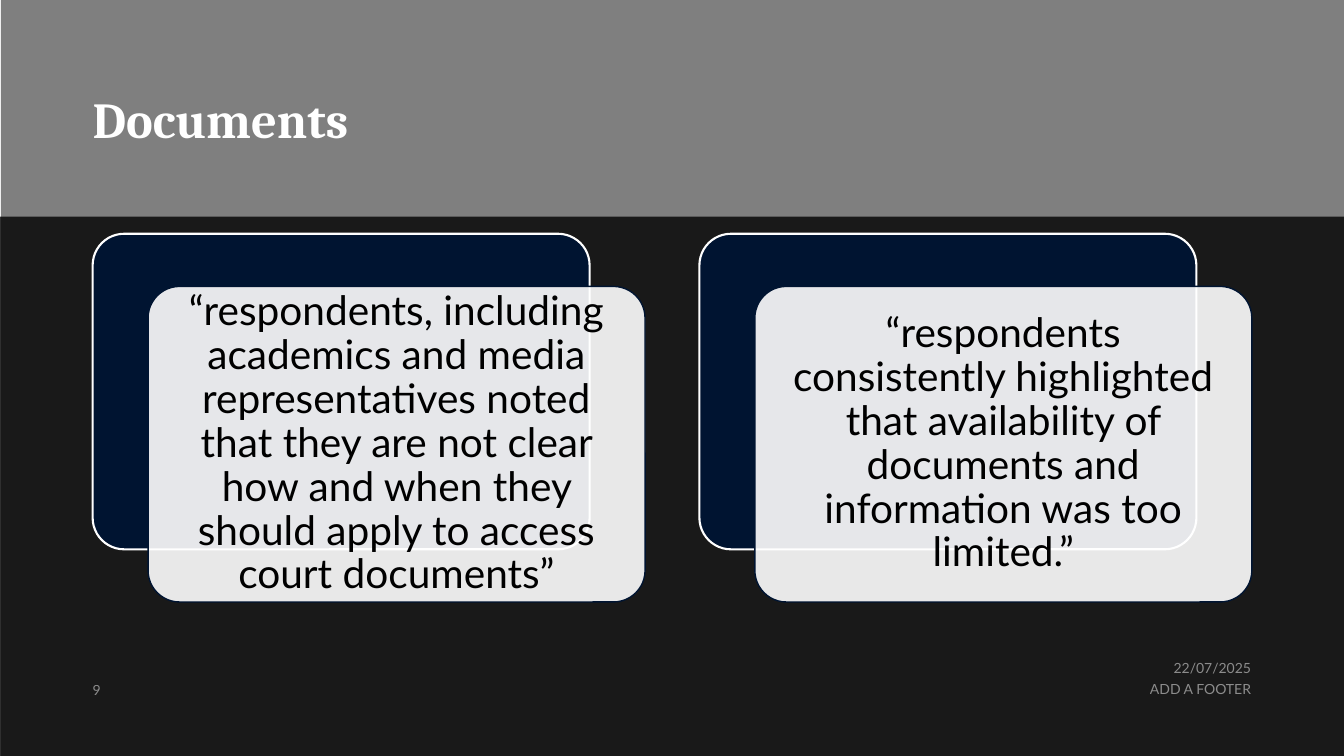
from pptx import Presentation
from pptx.dml.color import RGBColor
from pptx.enum import shapes, text
from pptx.oxml import ns, xmlchemy
from pptx.util import Pt

BLACK = RGBColor(0x00, 0x00, 0x00)
WHITE = RGBColor(0xFF, 0xFF, 0xFF)
NAVY = RGBColor(0x00, 0x14, 0x31)
PALE_GREY = RGBColor(0xD9, 0xD9, 0xD9)

SLIDE_WIDTH, SLIDE_HEIGHT = 960, 540
MARGIN = 66.2
HEADER_HEIGHT = 154.8
CARD_WIDTH, CARD_HEIGHT = 355, 225.4
CARD_TOP = 167
CARD_PITCH = 433.4
FRONT_SHIFT_X, FRONT_SHIFT_Y = 39.6, 37.6

QUOTES = [
    "“respondents, including academics and media representatives noted that they "
    "are not clear how and when they should apply to access court documents”",
    "“respondents consistently highlighted that availability of documents and "
    "information was too limited.”",
]


def set_opacity(properties, percent):
    """Set the opacity of the first solid colour under a properties element."""
    colour = properties.find(".//" + ns.qn("a:srgbClr"))
    alpha = xmlchemy.OxmlElement("a:alpha")
    alpha.set("val", str(percent * 1000))
    colour.append(alpha)


def format_frame(frame, anchor, inset=0):
    """Wrap a text frame and set its anchor and equal insets."""
    frame.word_wrap = True
    frame.auto_size = text.MSO_AUTO_SIZE.NONE
    frame.vertical_anchor = anchor
    frame.margin_left = frame.margin_right = Pt(inset)
    frame.margin_top = frame.margin_bottom = Pt(inset)


def add_run(paragraph, words, font_name, size, colour, bold=False):
    """Add one formatted run to a paragraph and return it."""
    run = paragraph.add_run()
    run.text = words
    run.font.name = font_name
    run.font.size = Pt(size)
    run.font.bold = bold
    run.font.color.rgb = colour
    return run


def add_panel(slide, kind, left, top, width, height, colour, opacity=100, line=None):
    """Add a filled shape with optional transparency and (colour, width) line."""
    shape = slide.shapes.add_shape(kind, Pt(left), Pt(top), Pt(width), Pt(height))
    shape.shadow.inherit = False
    shape.fill.solid()
    shape.fill.fore_color.rgb = colour
    if opacity < 100:
        set_opacity(shape._element.spPr, opacity)
    if line:
        shape.line.color.rgb = line[0]
        shape.line.width = Pt(line[1])
    else:
        shape.line.fill.background()
    return shape


def add_title(slide, words):
    """Place the title placeholder above the header band."""
    title = slide.shapes.title
    title.left, title.top = Pt(MARGIN), Pt(63.4)
    title.width, title.height = Pt(540), Pt(43.2)
    slide.shapes._spTree.append(title._element)
    format_frame(title.text_frame, text.MSO_ANCHOR.BOTTOM)
    paragraph = title.text_frame.paragraphs[0]
    paragraph.alignment = text.PP_ALIGN.LEFT
    paragraph.line_spacing = 0.9
    add_run(paragraph, words, "Cambria", 36, WHITE, bold=True)


def add_card(slide, left, top, colour, opacity, line):
    """Add one rounded card."""
    card = add_panel(slide, shapes.MSO_SHAPE.ROUNDED_RECTANGLE, left, top,
                     CARD_WIDTH, CARD_HEIGHT, colour, opacity, line)
    card.adjustments[0] = 0.1
    return card


def add_quote(slide, left, words):
    """Add a navy card with a pale quote card overlapping it."""
    add_card(slide, left, CARD_TOP, NAVY, 100, (WHITE, 1.5))
    front = add_card(slide, left + FRONT_SHIFT_X, CARD_TOP + FRONT_SHIFT_Y,
                     WHITE, 90, (NAVY, 1))
    format_frame(front.text_frame, text.MSO_ANCHOR.MIDDLE, 8.7)
    paragraph = front.text_frame.paragraphs[0]
    paragraph.alignment = text.PP_ALIGN.CENTER
    paragraph.line_spacing = 0.9
    add_run(paragraph, words, "Lato", 29, BLACK)


def add_footer(slide, words, left, top, width, height, alignment, anchor, spacing=1.0):
    """Add one small translucent footer text."""
    box = slide.shapes.add_textbox(Pt(left), Pt(top), Pt(width), Pt(height))
    format_frame(box.text_frame, anchor)
    paragraph = box.text_frame.paragraphs[0]
    paragraph.alignment = alignment
    paragraph.line_spacing = spacing
    paragraph.space_after = Pt(6)
    run = add_run(paragraph, words, "Lato", 10, PALE_GREY)
    set_opacity(run._r.rPr, 60)


def main():
    """Build and save the slide."""
    presentation = Presentation()
    presentation.slide_width = Pt(SLIDE_WIDTH)
    presentation.slide_height = Pt(SLIDE_HEIGHT)
    slide = presentation.slides.add_slide(presentation.slide_layouts[5])

    rectangle = shapes.MSO_SHAPE.RECTANGLE
    add_panel(slide, rectangle, 0.7, 0, SLIDE_WIDTH, SLIDE_HEIGHT, BLACK, 50)
    add_panel(slide, rectangle, 0, HEADER_HEIGHT, SLIDE_WIDTH,
              SLIDE_HEIGHT - HEADER_HEIGHT, BLACK, 80)
    add_title(slide, "Documents")

    left, right = text.PP_ALIGN.LEFT, text.PP_ALIGN.RIGHT
    top, bottom = text.MSO_ANCHOR.TOP, text.MSO_ANCHOR.BOTTOM
    add_footer(slide, "22/07/2025", 677.6, 472.2, 216, 11.5, right, top, 0.9)
    add_footer(slide, "ADD A FOOTER", 569.6, 486, 324, 15, right, top)
    add_footer(slide, "9", MARGIN, 484.6, 36, 14.4, left, bottom)

    for index, quote in enumerate(QUOTES):
        add_quote(slide, MARGIN + index * CARD_PITCH, quote)
    presentation.save("out.pptx")


if __name__ == "__main__":
    main()
